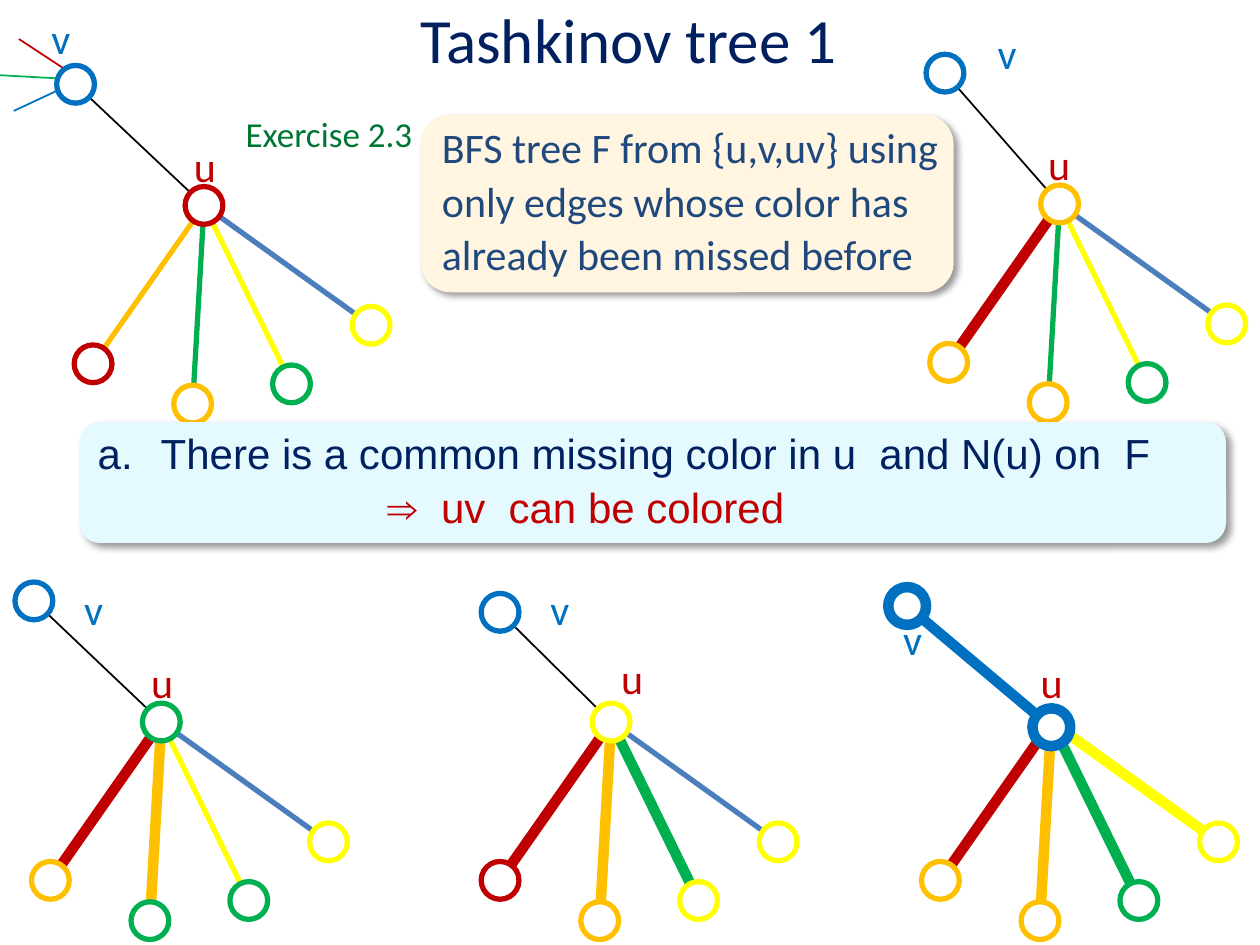
"""Build the Tashkinov tree slide: five edge-coloured trees, two callouts and a title."""
from dataclasses import dataclass
from typing import NamedTuple

from lxml.etree import SubElement
from pptx import Presentation
from pptx.dml.color import RGBColor
from pptx.enum.shapes import MSO_CONNECTOR, MSO_SHAPE
from pptx.enum.text import MSO_ANCHOR, PP_ALIGN
from pptx.oxml.ns import qn
from pptx.util import Pt

COLORS = {
    "black": "000000", "white": "FFFFFF", "navy": "002060", "slate": "1F497D",
    "red": "C00000", "orange": "FFC000", "green": "00B050", "yellow": "FFFF00",
    "blue": "0070C0", "steel": "4B7EBC", "forest": "007635",
    "cream": "FFF5E1", "ice": "E5FAFF",
}
DIAMETER = 21.6
LEAF_OFFSETS = [(-63.4, 90.5), (-6.5, 113.5), (50, 102), (95.5, 68.5)]


class Point(NamedTuple):
    x: float
    y: float


class Branch(NamedTuple):
    edge: str
    width: float
    leaf: str


@dataclass
class Tree:
    u: Point
    v: Point
    u_label: Point
    v_label: Point
    u_color: str
    branches: list[Branch]
    uv_color: str = "black"
    uv_width: float = 1
    ring: float = 3
    u_drop: float = 0


TREES = [
    Tree(Point(116.6, 117.4), Point(43.2, 48.2), Point(103.7, 77), Point(22.3, 3.6), "red",
         [Branch("orange", 3, "red"), Branch("green", 3, "orange"),
          Branch("yellow", 3, "green"), Branch("steel", 3, "yellow")]),
    Tree(Point(605.5, 116.6), Point(540, 41.8), Point(591.8, 75.6), Point(563, 12.2), "orange",
         [Branch("red", 6, "orange"), Branch("green", 3, "orange"),
          Branch("yellow", 3, "green"), Branch("steel", 3, "yellow")]),
    Tree(Point(92.2, 412.6), Point(19.4, 343.4), Point(79.2, 371.5), Point(41, 329.8), "green",
         [Branch("red", 6, "orange"), Branch("orange", 6, "green"),
          Branch("yellow", 3, "green"), Branch("steel", 3, "yellow")]),
    Tree(Point(349.2, 412.6), Point(285.8, 349.9), Point(347.8, 369.4), Point(307.4, 329.8), "yellow",
         [Branch("red", 6, "red"), Branch("orange", 6, "orange"),
          Branch("green", 6, "yellow"), Branch("steel", 3, "yellow")]),
    Tree(Point(600.8, 412.6), Point(518.4, 346.3), Point(587.5, 371.5), Point(509, 347), "blue",
         [Branch("red", 6, "orange"), Branch("orange", 6, "orange"),
          Branch("green", 6, "green"), Branch("yellow", 6, "yellow")],
         uv_color="blue", uv_width=6, ring=6, u_drop=3),
]
SPOKES = [("green", Point(0, 43)), ("red", Point(10.8, 22.3)), ("blue", Point(7.9, 63.4))]


def rgb(name: str) -> RGBColor:
    """Return the named colour."""
    return RGBColor.from_string(COLORS[name])


def add_line(s, start: Point, end: Point, color: str, width: float) -> None:
    """Draw a straight edge without a shadow."""
    sp = s.shapes.add_connector(MSO_CONNECTOR.STRAIGHT, *map(Pt, (*start, *end)))
    sp.line.color.rgb = rgb(color)
    sp.line.width = Pt(width)
    SubElement(sp._element.spPr, qn("a:effectLst"))


def add_node(s, center: Point, color: str, ring: float = 3) -> None:
    """Draw a white vertex with a coloured ring."""
    left, top = center.x - DIAMETER / 2, center.y - DIAMETER / 2
    sp = s.shapes.add_shape(MSO_SHAPE.OVAL, *map(Pt, (left, top, DIAMETER, DIAMETER)))
    sp.shadow.inherit = False
    sp.fill.solid()
    sp.fill.fore_color.rgb = rgb("white")
    sp.line.color.rgb = rgb(color)
    sp.line.width = Pt(ring)


def write(p, text: str, *, size: float = 24, color: str = "slate", font: str = "Calibri",
          align=PP_ALIGN.LEFT, spacing: float = 1, before: float = 0,
          indent: float = 0, hanging: float = 0, numbering: str = "") -> None:
    """Put formatted text into a paragraph."""
    p.alignment = align
    p.line_spacing = spacing
    p.space_before = Pt(before)
    pPr = p._p.get_or_add_pPr()
    pPr.set("marL", str(Pt(indent)))
    pPr.set("indent", str(Pt(-hanging)))
    if numbering:
        SubElement(pPr, qn("a:buAutoNum"), type=numbering)
    r = p.add_run()
    r.text = text
    r.font.size = Pt(size)
    r.font.name = font
    r.font.color.rgb = rgb(color)


def add_label(s, text: str, at: Point, width: float = 32, height: float = 36, **fmt):
    """Add a text box and return its frame."""
    tf = s.shapes.add_textbox(*map(Pt, (*at, width, height))).text_frame
    tf.word_wrap = True
    write(tf.paragraphs[0], text, **fmt)
    return tf


def add_callout(s, at: Point, width: float, height: float, fill: str, lines: list[dict]) -> None:
    """Draw a rounded box with a soft shadow and one paragraph per line."""
    sp = s.shapes.add_shape(MSO_SHAPE.ROUNDED_RECTANGLE, *map(Pt, (*at, width, height)))
    sp.adjustments[0] = 0.167
    sp.shadow.inherit = False
    sp.fill.solid()
    sp.fill.fore_color.rgb = rgb(fill)
    sp.line.fill.background()
    effects = sp._element.spPr.find(qn("a:effectLst"))
    shadow = SubElement(effects, qn("a:outerShdw"), blurRad=str(Pt(4)), dist=str(Pt(3)),
                        dir="2700000", algn="tl", rotWithShape="0")
    tint = SubElement(shadow, qn("a:srgbClr"), val=COLORS["black"])
    SubElement(tint, qn("a:alpha"), val="40000")
    tf = sp.text_frame
    tf.word_wrap = False
    tf.vertical_anchor = MSO_ANCHOR.MIDDLE
    for i, line in enumerate(lines):
        p = tf.add_paragraph() if i else tf.paragraphs[0]
        write(p, spacing=0.9, **line)


def draw_tree(s, tree: Tree) -> None:
    """Draw the edges, vertices and labels of a tree."""
    u = Point(tree.u.x, tree.u.y + tree.u_drop)
    leaves = [Point(tree.u.x + dx, tree.u.y + dy) for dx, dy in LEAF_OFFSETS]
    add_line(s, u, tree.v, tree.uv_color, tree.uv_width)
    for branch, leaf in zip(tree.branches, leaves):
        add_line(s, tree.u, leaf, branch.edge, branch.width)
    for branch, leaf in zip(tree.branches, leaves):
        add_node(s, leaf, branch.leaf)
    add_node(s, u, tree.u_color, tree.ring)
    add_node(s, tree.v, "blue", tree.ring)
    add_label(s, "u", tree.u_label, color="red")
    add_label(s, "v", tree.v_label, color="blue")


def main() -> None:
    """Build and save the slide."""
    prs = Presentation()
    prs.slide_width, prs.slide_height = Pt(720), Pt(540)
    s = prs.slides.add_slide(prs.slide_layouts[6])
    tf = add_label(s, "Tashkinov tree 1", Point(35.3, 0), 648, 44,
                   size=36, color="navy", align=PP_ALIGN.CENTER)
    tf.margin_top = tf.margin_bottom = 0
    tf.vertical_anchor = MSO_ANCHOR.MIDDLE
    for color, end in SPOKES:
        add_line(s, Point(46.2, 45.5), end, color, 1)
    for tree in TREES:
        draw_tree(s, tree)
    add_label(s, "Exercise 2.3", Point(133.2, 60.5), 121, 31.5, size=20, color="forest")
    add_callout(s, Point(240.5, 65.5), 304.5, 101.5, "cream", [
        dict(text=text, before=4.5) for text in (
            "BFS tree F from {u,v,uv} using",
            "only edges whose color has",
            "already been missed before")])
    add_callout(s, Point(45.4, 241.2), 655.2, 69.1, "ice", [
        dict(text="There is a common missing color in u  and N(u) on  F", font="Arial",
             color="navy", before=5, indent=36, hanging=36, numbering="alphaLcPeriod"),
        dict(text="⇒  uv  can be colored", font="Arial", color="red", before=5, indent=165.6)])
    prs.save("out.pptx")


if __name__ == "__main__":
    main()
